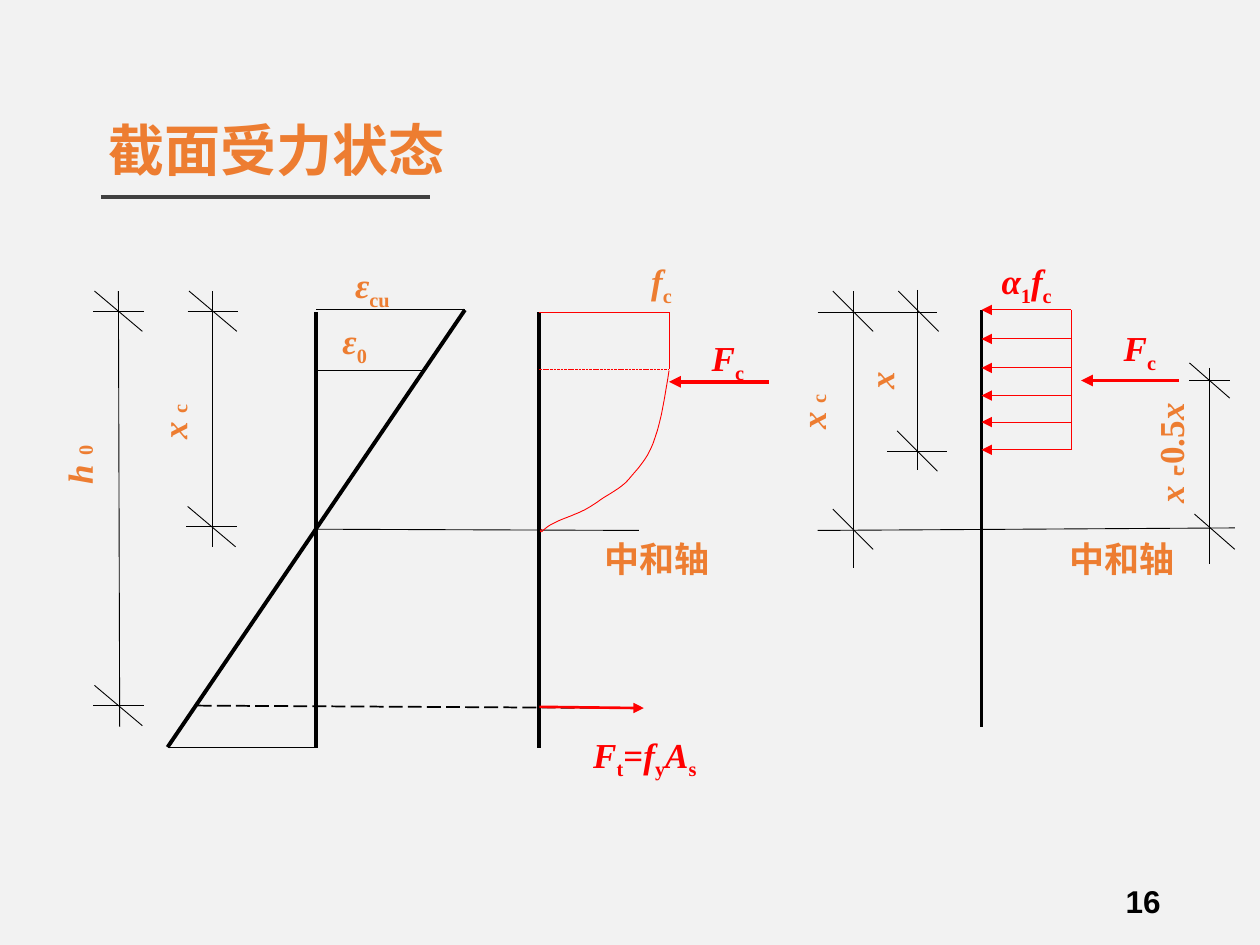
from dataclasses import dataclass

import pptx
import pptx.dml.color
import pptx.enum.dml
import pptx.enum.shapes
import pptx.enum.text
import pptx.oxml
import pptx.oxml.ns
import pptx.util
from pptx.util import Inches

BLACK, RED, ORANGE = "000000", "FF0000", "ED7D31"
SERIF, CHINESE = "Times New Roman", "Noto Sans CJK SC"
DASH = pptx.enum.dml.MSO_LINE
UNITS_PER_INCH = 1000


@dataclass
class Line:
    start: tuple[float, float]
    end: tuple[float, float]
    color: str = BLACK
    width: float = 0.5
    dash: object = None
    arrow: str = ""


@dataclass
class Tick:
    x: float
    y: float
    bar: float
    slash_x: float
    slash_y: float


@dataclass
class Label:
    text: str
    box: tuple[float, float, float, float]
    color: str = ORANGE
    vertical: bool = False
    wrap: bool = True
    font: str = SERIF


STRESS_ROWS = (2.46, 2.69, 2.92, 3.14, 3.35, 3.57)

STRAIN_LINES = [
    Line((2.51, 2.48), (2.51, 5.94), width=2.25),
    Line((2.51, 2.46), (3.69, 2.46)),
    Line((2.51, 2.94), (3.38, 2.94)),
    Line((1.33, 5.93), (2.51, 5.93)),
    Line((2.51, 4.2), (5.07, 4.21)),
    Line((3.69, 2.46), (1.33, 5.93), width=2.25),
    Line((1.57, 5.6), (5.03, 5.62), width=1, dash=DASH.LONG_DASH),
]
STRESS_LINES = [
    Line((4.28, 2.48), (4.28, 5.94), width=2.25),
    Line((4.28, 2.48), (5.31, 2.48), RED),
    Line((4.28, 2.93), (5.31, 2.93), RED, dash=DASH.SQUARE_DOT),
    Line((5.31, 2.48), (5.31, 2.93), RED),
    Line((4.28, 5.61), (5.11, 5.62), RED, 1.5, arrow="tailEnd"),
    Line((5.31, 3.03), (6.1, 3.03), RED, 2.25, arrow="headEnd"),
]
BLOCK_LINES = [
    Line((7.79, 2.46), (7.79, 5.77), width=2.25),
    *[Line((7.79, y), (8.5, y), RED, arrow="headEnd") for y in STRESS_ROWS],
    Line((8.5, STRESS_ROWS[0]), (8.5, STRESS_ROWS[-1]), RED),
    Line((8.58, 3.02), (9.36, 3.02), RED, 2.25, arrow="headEnd"),
    Line((6.49, 4.21), (9.8, 4.19)),
    Line((6.49, 2.48), (7.44, 2.48)),
]
DIMENSION_LINES = [
    Line((0.94, 2.31), (0.95, 5.77)),
    Line((1.69, 2.31), (1.69, 4.34)),
    Line((6.77, 2.31), (6.77, 4.51)),
    Line((7.28, 2.3), (7.28, 3.73)),
    Line((9.6, 2.92), (9.6, 4.48)),
]
TICKS = [
    Tick(0.94, 2.47, 0.2, 0.19, 0.16),
    Tick(0.94, 5.6, 0.2, 0.19, 0.16),
    Tick(1.69, 2.47, 0.2, 0.19, 0.16),
    Tick(1.68, 4.18, 0.2, 0.19, 0.16),
    Tick(6.77, 2.47, 0, 0.16, 0.16),
    Tick(6.77, 4.2, 0, 0.16, 0.16),
    Tick(7.29, 2.47, 0, 0.16, 0.16),
    Tick(7.28, 3.58, 0.24, 0.16, 0.16),
    Tick(9.6, 3.02, 0.16, 0.16, 0.14),
    Tick(9.64, 4.22, 0, 0.16, 0.14),
]
CURVE_START = (5.31, 2.94)
CURVE_SEGMENTS = [
    ((5.28, 3.13), (5.25, 3.33), (5.2, 3.47)),
    ((5.16, 3.61), (5.08, 3.7), (5.01, 3.78)),
    ((4.95, 3.86), (4.87, 3.9), (4.79, 3.95)),
    ((4.72, 4), (4.66, 4.04), (4.59, 4.07)),
    ((4.52, 4.1), (4.43, 4.13), (4.38, 4.16)),
    ((4.34, 4.18), (4.31, 4.21), (4.3, 4.22)),
    ((4.28, 4.22), (4.29, 4.21), (4.3, 4.2)),
]
LABELS = [
    Label("ε _cu", (2.72, 2.04, 0.66, 0.43), wrap=False),
    Label("ε _0", (2.62, 2.49, 0.57, 0.43), wrap=False),
    Label("f _c", (5.07, 2.01, 0.54, 0.43)),
    Label("F _c", (5.55, 2.62, 0.54, 0.43), RED),
    Label("F _t = f _y A _s", (4.61, 5.77, 1.04, 0.43), RED, wrap=False),
    Label("α _1 f _c", (7.85, 2.01, 0.72, 0.43), RED),
    Label("F _c", (8.82, 2.54, 0.54, 0.43), RED),
    Label("h _0", (0.41, 3.6, 0.53, 0.34), vertical=True, wrap=False),
    Label("x _c", (1.16, 3.27, 0.53, 0.32), vertical=True, wrap=False),
    Label("x _c", (6.23, 3.19, 0.53, 0.32), vertical=True, wrap=False),
    Label("x", (6.77, 2.95, 0.53, 0.24), vertical=True, wrap=False),
    Label("x _c -0.5 x", (9.07, 3.19, 0.53, 0.9), vertical=True, wrap=False),
    Label("中和轴", (4.7, 4.22, 1.21, 0.46), font=CHINESE),
    Label("中和轴", (8.39, 4.22, 1.21, 0.46), font=CHINESE),
]


def rgb(color: str) -> pptx.dml.color.RGBColor:
    return pptx.dml.color.RGBColor.from_string(color)


def add_text(paragraph, text: str, *, size=20, font=SERIF, color=ORANGE,
             bold=True, italic=False, baseline=0) -> None:
    run = paragraph.add_run()
    run.text = text
    run.font.size = pptx.util.Pt(size)
    run.font.name = font
    run.font.bold = bold
    run.font.italic = italic
    run.font.color.rgb = rgb(color)
    properties = run.font._element
    east_asian = pptx.oxml.ns.qn("a:ea")
    properties.find(pptx.oxml.ns.qn("a:latin")).addnext(
        properties.makeelement(east_asian, {"typeface": font}))
    if baseline:
        properties.set("baseline", str(baseline))


def add_line(slide, line: Line) -> None:
    connector = slide.shapes.add_connector(
        pptx.enum.shapes.MSO_CONNECTOR.STRAIGHT,
        *[Inches(value) for value in line.start + line.end])
    connector.line.color.rgb = rgb(line.color)
    connector.line.width = pptx.util.Pt(line.width)
    if line.dash:
        connector.line.dash_style = line.dash
    if line.arrow:
        outline = connector.line._get_or_add_ln()
        outline.append(outline.makeelement(
            pptx.oxml.ns.qn("a:" + line.arrow), {"type": "triangle"}))
    properties = connector._element.spPr
    properties.append(properties.makeelement(pptx.oxml.ns.qn("a:effectLst"), {}))


def add_tick(slide, tick: Tick) -> None:
    if tick.bar:
        add_line(slide, Line((tick.x - tick.bar, tick.y), (tick.x + tick.bar, tick.y)))
    add_line(slide, Line((tick.x - tick.slash_x, tick.y - tick.slash_y),
                         (tick.x + tick.slash_x, tick.y + tick.slash_y)))


def add_curve(slide, steps: int = 8) -> None:
    points, start = [], CURVE_START
    for first, second, end in CURVE_SEGMENTS:
        for step in range(1, steps + 1):
            t = step / steps
            weights = ((1 - t) ** 3, 3 * t * (1 - t) ** 2, 3 * t * t * (1 - t), t ** 3)
            points.append(tuple(
                UNITS_PER_INCH * sum(weight * value for weight, value in zip(weights, values))
                for values in zip(start, first, second, end)))
        start = end
    builder = slide.shapes.build_freeform(
        *[UNITS_PER_INCH * value for value in CURVE_START], scale=Inches(1) / UNITS_PER_INCH)
    builder.add_line_segments(points, close=False)
    shape = builder.convert_to_shape()
    shape.shadow.inherit = False
    shape.fill.background()
    shape.line.color.rgb = rgb(RED)
    shape.line.width = pptx.util.Pt(0.5)


def add_label(slide, label: Label) -> None:
    shape = slide.shapes.add_textbox(*[Inches(value) for value in label.box])
    frame = shape.text_frame
    frame.word_wrap = label.wrap
    frame.auto_size = pptx.enum.text.MSO_AUTO_SIZE.SHAPE_TO_FIT_TEXT
    if label.vertical:
        shape.rotation = 180
        frame._txBody.bodyPr.set("vert", "eaVert")
    for part in label.text.split():
        subscript = part.startswith("_")
        italic = part.isalpha() and label.font == SERIF
        add_text(frame.paragraphs[0], part.lstrip("_"), font=label.font, color=label.color,
                 italic=italic, baseline=-25000 if subscript else 0)


def add_title(slide) -> None:
    title = slide.shapes.title
    title.left, title.top, title.width, title.height = map(Inches, (0.76, 0.87, 4.13, 0.63))
    title.text_frame.auto_size = pptx.enum.text.MSO_AUTO_SIZE.NONE
    title.text_frame.vertical_anchor = pptx.enum.text.MSO_ANCHOR.MIDDLE
    paragraph = title.text_frame.paragraphs[0]
    paragraph.alignment = pptx.enum.text.PP_ALIGN.LEFT
    add_text(paragraph, "截面受力状态", size=32, font=CHINESE)
    add_line(slide, Line((0.8, 1.56), (3.41, 1.56), "404040", 2.25))


def add_page_number(slide) -> None:
    shape = slide.shapes.add_textbox(Inches(7.06), Inches(6.95), Inches(2.25), Inches(0.4))
    paragraph = shape.text_frame.paragraphs[0]
    shape.text_frame.word_wrap = True
    paragraph.alignment = pptx.enum.text.PP_ALIGN.RIGHT
    add_text(paragraph, "16", size=18, font="Arial", color=BLACK)


def main() -> None:
    presentation = pptx.Presentation()
    presentation.slide_width, presentation.slide_height = Inches(10), Inches(7.5)
    slide = presentation.slides.add_slide(presentation.slide_layouts[5])
    slide.background.fill.solid()
    slide.background.fill.fore_color.rgb = rgb("F2F2F2")
    add_title(slide)
    for line in STRAIN_LINES + STRESS_LINES + BLOCK_LINES + DIMENSION_LINES:
        add_line(slide, line)
    for tick in TICKS:
        add_tick(slide, tick)
    add_curve(slide)
    for label in LABELS:
        add_label(slide, label)
    add_page_number(slide)
    presentation.save("out.pptx")


if __name__ == "__main__":
    main()
